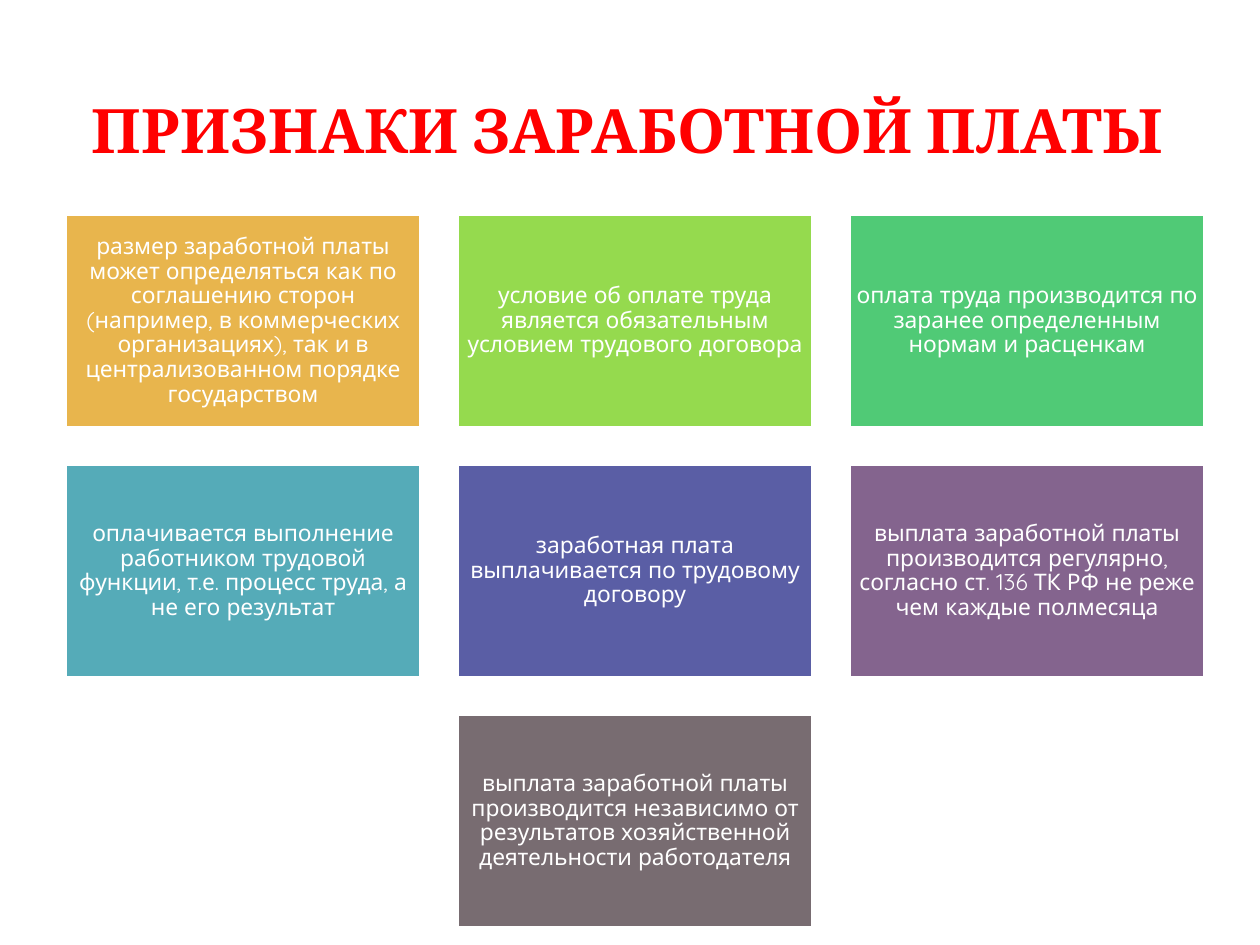
from pptx import Presentation
from pptx.dml.color import RGBColor
from pptx.enum.shapes import MSO_SHAPE as Shape
from pptx.enum.text import MSO_ANCHOR as Anchor, PP_ALIGN as Align
from pptx.util import Pt

PX = 914400 // 126
WHITE, RED = "FFFFFF", "FF0000"

TITLE = "ПРИЗНАКИ ЗАРАБОТНОЙ ПЛАТЫ"
FEATURE_ROWS = [
    [
        ("E8B54D", "размер заработной платы может определяться как по соглашению "
                   "сторон (например, в коммерческих организациях), так и в "
                   "централизованном порядке государством"),
        ("95DA4E", "условие об оплате труда является обязательным условием "
                   "трудового договора"),
        ("50CA76", "оплата труда производится по заранее определенным нормам "
                   "и расценкам"),
    ],
    [
        ("55ABB8", "оплачивается выполнение работником трудовой функции, "
                   "т.е. процесс труда, а не его результат"),
        ("5A5EA5", "заработная плата выплачивается по трудовому договору"),
        ("84648E", "выплата заработной платы производится регулярно, согласно "
                   "ст. 136 ТК РФ не реже чем каждые полмесяца"),
    ],
    [
        ("786C71", "выплата заработной платы производится независимо от "
                   "результатов хозяйственной деятельности работодателя"),
    ],
]

TITLE_BOX = (59, 57, 1138, 144)
GRID_LEFT, GRID_TOP, GRID_WIDTH = 64, 214, 1142
CARD_WIDTH, CARD_HEIGHT, GAP = 356, 214, 36


def px(*lengths):
    return [round(length * PX) for length in lengths]


def color(hex_code):
    return RGBColor.from_string(hex_code)


def write(holder, text, *, font, size, ink, bold=False, inset=6, spacing=1.0):
    """Put one centred paragraph into a shape or text box."""
    frame = holder.text_frame
    frame.word_wrap = True
    frame.vertical_anchor = Anchor.MIDDLE
    frame.margin_left, frame.margin_top, frame.margin_right, frame.margin_bottom = px(*[inset] * 4)
    paragraph = frame.paragraphs[0]
    paragraph.alignment = Align.CENTER
    paragraph.line_spacing = spacing
    run = paragraph.add_run()
    run.text = text
    run.font.name, run.font.size, run.font.bold = font, Pt(size), bold
    run.font.color.rgb = color(ink)


def add_card(slide, left, top, fill, text):
    card = slide.shapes.add_shape(Shape.RECTANGLE, *px(left, top, CARD_WIDTH, CARD_HEIGHT))
    card.shadow.inherit = False
    card.fill.solid()
    card.fill.fore_color.rgb = color(fill)
    card.line.color.rgb = color(WHITE)
    card.line.width = Pt(2)
    write(card, text, font="Quicksand", size=13, ink=WHITE, spacing=0.9)


def main():
    deck = Presentation()
    deck.slide_width, deck.slide_height = px(1260, 945)
    slide = deck.slides.add_slide(deck.slide_layouts[6])

    heading = slide.shapes.add_textbox(*px(*TITLE_BOX))
    write(heading, TITLE, font="Cambria", size=35, ink=RED, bold=True, inset=12)

    for row, features in enumerate(FEATURE_ROWS):
        row_width = len(features) * (CARD_WIDTH + GAP) - GAP
        row_left = GRID_LEFT + (GRID_WIDTH - row_width) / 2
        top = GRID_TOP + row * (CARD_HEIGHT + GAP)
        for column, (fill, text) in enumerate(features):
            add_card(slide, row_left + column * (CARD_WIDTH + GAP), top, fill, text)

    deck.save("out.pptx")


if __name__ == "__main__":
    main()
